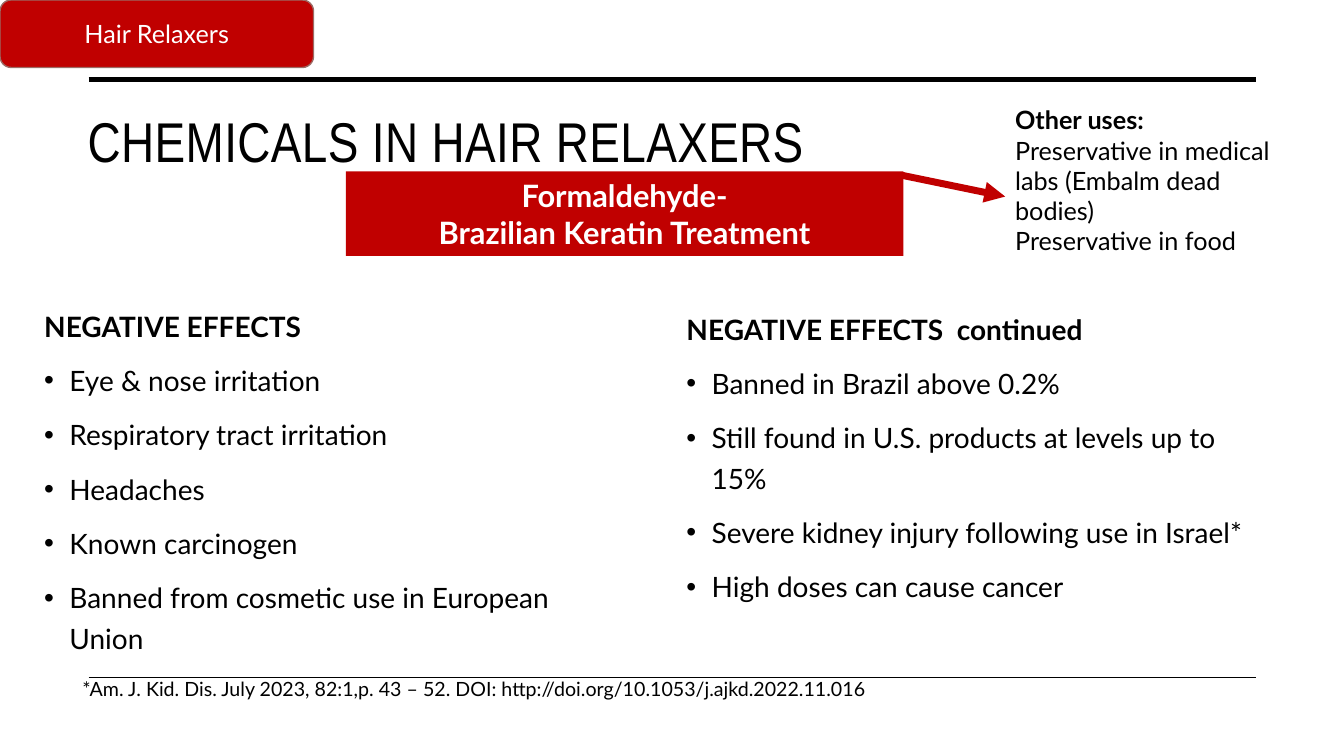
from lxml import etree
from pptx import Presentation
from pptx.dml.color import RGBColor
from pptx.enum.shapes import MSO_CONNECTOR, MSO_SHAPE
from pptx.enum.text import MSO_ANCHOR, PP_ALIGN
from pptx.oxml.ns import qn
from pptx.util import Inches, Pt

BLACK = RGBColor(0x00, 0x00, 0x00)
WHITE = RGBColor(0xFF, 0xFF, 0xFF)
RED = RGBColor(0xC0, 0x00, 0x00)
ROSE = RGBColor(0x9C, 0x6B, 0x65)
LINE = MSO_CONNECTOR.STRAIGHT
ROUND, RECT = MSO_SHAPE.ROUNDED_RECTANGLE, MSO_SHAPE.RECTANGLE
TOP, MIDDLE = MSO_ANCHOR.TOP, MSO_ANCHOR.MIDDLE
LEFT, CENTER = PP_ALIGN.LEFT, PP_ALIGN.CENTER

deck = Presentation()
deck.slide_width, deck.slide_height = Inches(13.33), Inches(7.5)
slide = deck.slides.add_slide(deck.slide_layouts[5])
shapes = slide.shapes


def write(shape, lines, size, color=BLACK, align=LEFT, anchor=TOP, font="Lato"):
    """Fill a shape with (text, bold) lines, one paragraph each."""
    frame = shape.text_frame
    frame.word_wrap = True
    frame.vertical_anchor = anchor
    for i, (text, bold) in enumerate(lines):
        para = frame.add_paragraph() if i else frame.paragraphs[0]
        para.alignment = align
        run = para.add_run()
        run.text = text
        run.font.name, run.font.size, run.font.bold = font, Pt(size), bold
        run.font.color.rgb = color
    return frame


def draw(x1, y1, x2, y2, color, width):
    """Add a plain straight line."""
    line = shapes.add_connector(LINE, Inches(x1), Inches(y1), Inches(x2), Inches(y2))
    line.line.color.rgb = color
    line.line.width = Pt(width)
    etree.SubElement(line._element.spPr, qn("a:effectLst"))
    return line


# Rules above and below the content
for y, width in ((0.79, 3.5), (6.72, 1)):
    draw(0.88, y, 12.46, y, BLACK, width)

# Title
title = shapes.title
title.left, title.top = Inches(0.77), Inches(1.01)
title.width, title.height = Inches(11.69), Inches(1.5)
frame = write(title, [("CHEMICALS IN HAIR RELAXERS", False)], 40, font="Arial Narrow")
frame.paragraphs[0].runs[0].font._element.set("spc", "30")

# Two columns of effects
columns = [
    (0.34, 2.95, 5.57, 3.69, "NEGATIVE EFFECTS", [
        "Eye & nose irritation", "Respiratory tract irritation", "Headaches",
        "Known carcinogen", "Banned from cosmetic use in European Union"]),
    (6.71, 2.98, 5.75, 3.09, "NEGATIVE EFFECTS  continued", [
        "Banned in Brazil above 0.2%", "Still found in U.S. products at levels up to 15%",
        "Severe kidney injury following use in Israel*", "High doses can cause cancer"]),
]
for x, y, w, h, head, items in columns:
    box = shapes.add_textbox(Inches(x), Inches(y), Inches(w), Inches(h))
    frame = write(box, [(head, True)] + [(item, False) for item in items], 20)
    for i, para in enumerate(frame.paragraphs):
        para.line_spacing = 1.2
        if i:
            para.space_before = Pt(10)
            props = para._p.get_or_add_pPr()
            props.set("marL", str(Inches(0.25)))
            props.set("indent", str(-Inches(0.25)))
            etree.SubElement(props, qn("a:buFont"), typeface="Arial")
            etree.SubElement(props, qn("a:buChar"), char="•")

# Citation
note = shapes.add_textbox(Inches(0.72), Inches(6.67), Inches(9.27), Inches(0.34))
write(note, [("*Am. J. Kid. Dis. July 2023, 82:1,p. 43 – 52. "
              "DOI: http://doi.org/10.1053/j.ajkd.2022.11.016", False)], 14)

# Topic tab and chemical name
panels = [
    (ROUND, 0, 0, 3.11, 0.67, ROSE, 18, MIDDLE, [("Hair Relaxers", False)]),
    (RECT, 3.43, 1.7, 5.53, 0.84, None, 22, TOP,
     [("Formaldehyde-", True), ("Brazilian Keratin Treatment", True)]),
]
for kind, x, y, w, h, edge, size, anchor, lines in panels:
    panel = shapes.add_shape(kind, Inches(x), Inches(y), Inches(w), Inches(h))
    panel.shadow.inherit = False
    panel.fill.solid()
    panel.fill.fore_color.rgb = RED
    if edge is None:
        panel.line.fill.background()
    else:
        panel.line.color.rgb = edge
        panel.line.width = Pt(1)
    write(panel, lines, size, WHITE, CENTER, anchor)

# Other uses, with the arrow to them
uses = shapes.add_textbox(Inches(9.97), Inches(0.99), Inches(2.73), Inches(1.92))
write(uses, [("Other uses:", True),
             ("Preservative in medical labs (Embalm dead bodies)", False),
             ("Preservative in food", False)], 18)
arrow = draw(8.95, 1.74, 9.97, 1.95, RED, 5)
etree.SubElement(arrow.line._get_or_add_ln(), qn("a:tailEnd"), type="triangle")

deck.save("out.pptx")
